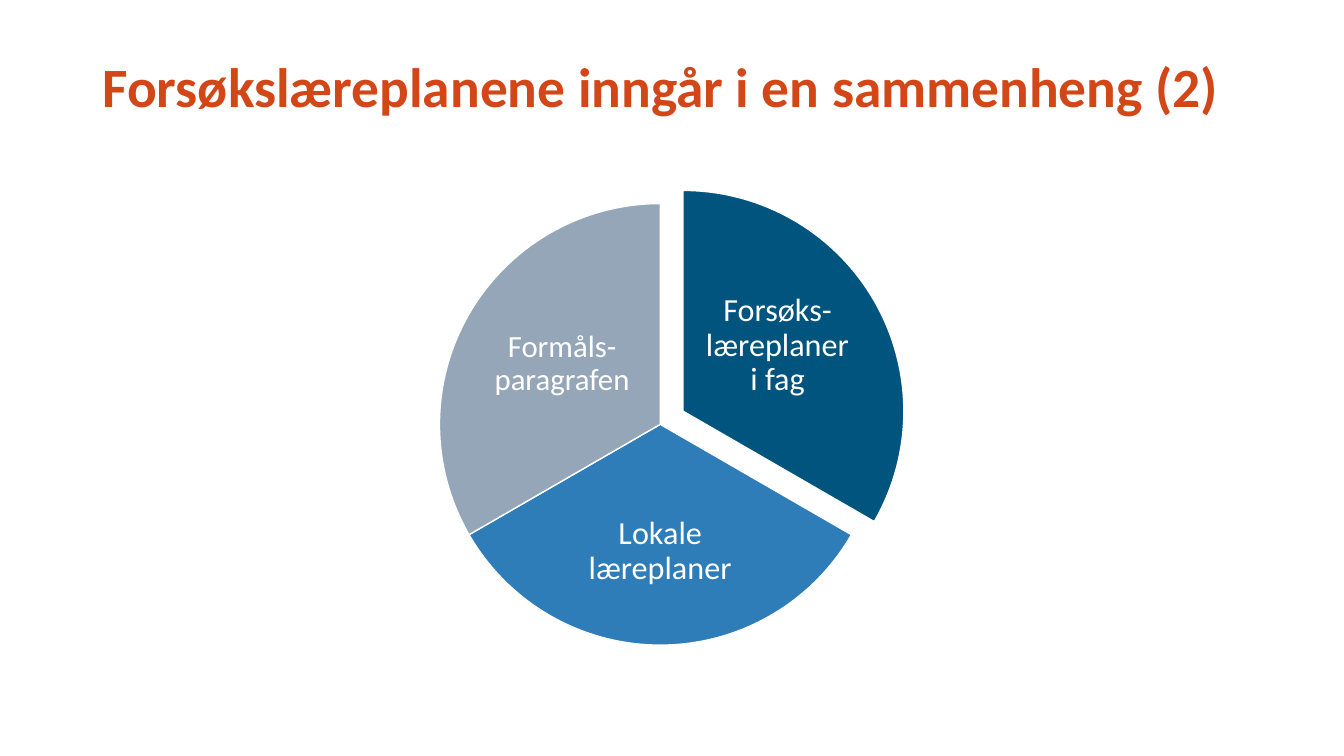
from pptx import Presentation
from pptx.dml.color import RGBColor
from pptx.enum.shapes import MSO_SHAPE
from pptx.enum.text import MSO_ANCHOR, PP_ALIGN
from pptx.util import Pt

PIE = MSO_SHAPE.PIE
MIDDLE = MSO_ANCHOR.MIDDLE
LEFT, CENTER = PP_ALIGN.LEFT, PP_ALIGN.CENTER

COLORS = {
    "title": "D24617",
    "subjects": "00547E",
    "local": "2E7CB8",
    "purpose": "95A6B9",
    "white": "FFFFFF",
}
DIAMETER = 315.4
PIE_LEFT, PIE_TOP = 313.9, 145.4
SLICE_DEGREES = 120
FIRST_ANGLE = 270
ANGLE_UNITS_PER_DEGREE = 0.6  # adjustment value 1 equals 100000 / 60000 degrees

# label, colour, offset of the slice, label box, text size
SLICES = [
    ("Forsøks-læreplaner i fag", "subjects", (16.3, -9.4), (501.8, 194.4, 107.3, 105.1), 23),
    ("Lokale læreplaner", "local", (0, 0), (400.3, 344.9, 142.6, 97.9), 23),
    ("Formåls-paragrafen", "purpose", (0, 0), (347.8, 207.4, 107.3, 105.1), 22),
]


class SlideBuilder:
    """Holds the style and the current slide."""

    font_name = "Calibri"
    line_spacing = 0.9

    def __init__(self, slide):
        self.slide = slide

    def text(self, content, box, size, color, bold=False, align=LEFT, inset=None):
        shape = self.slide.shapes.add_textbox(*map(Pt, box))
        frame = shape.text_frame
        frame.word_wrap = True
        frame.vertical_anchor = MIDDLE
        if inset is not None:
            frame.margin_left = frame.margin_right = Pt(inset)
            frame.margin_top = frame.margin_bottom = Pt(inset)
        paragraph = frame.paragraphs[0]
        paragraph.text = content
        paragraph.alignment = align
        paragraph.line_spacing = self.line_spacing
        font = paragraph.font
        font.name = self.font_name
        font.size = Pt(size)
        font.bold = bold
        font.color.rgb = RGBColor.from_string(COLORS[color])

    def pie_slice(self, left, top, start, end, color):
        """Draw a slice running clockwise between two angles in degrees."""
        shape = self.slide.shapes.add_shape(
            PIE, Pt(left), Pt(top), Pt(DIAMETER), Pt(DIAMETER))
        shape.adjustments[0] = start * ANGLE_UNITS_PER_DEGREE
        shape.adjustments[1] = end * ANGLE_UNITS_PER_DEGREE
        shape.shadow.inherit = False
        shape.fill.solid()
        shape.fill.fore_color.rgb = RGBColor.from_string(COLORS[color])
        shape.line.color.rgb = RGBColor.from_string(COLORS["white"])
        shape.line.width = Pt(1)


def main():
    presentation = Presentation()
    presentation.slide_width, presentation.slide_height = Pt(960), Pt(540)
    slide = presentation.slides.add_slide(presentation.slide_layouts[6])
    builder = SlideBuilder(slide)

    builder.text("Forsøkslæreplanene inngår i en sammenheng (2)",
                 (66, 28.8, 828, 69.8), 39.6, "title", bold=True)

    for index, (label, color, (shift_x, shift_y), box, size) in enumerate(SLICES):
        start = (FIRST_ANGLE + index * SLICE_DEGREES) % 360
        end = (start + SLICE_DEGREES) % 360
        builder.pie_slice(PIE_LEFT + shift_x, PIE_TOP + shift_y, start, end, color)
        builder.text(label, box, size, "white", align=CENTER, inset=2.3)

    presentation.save("out.pptx")


if __name__ == "__main__":
    main()
